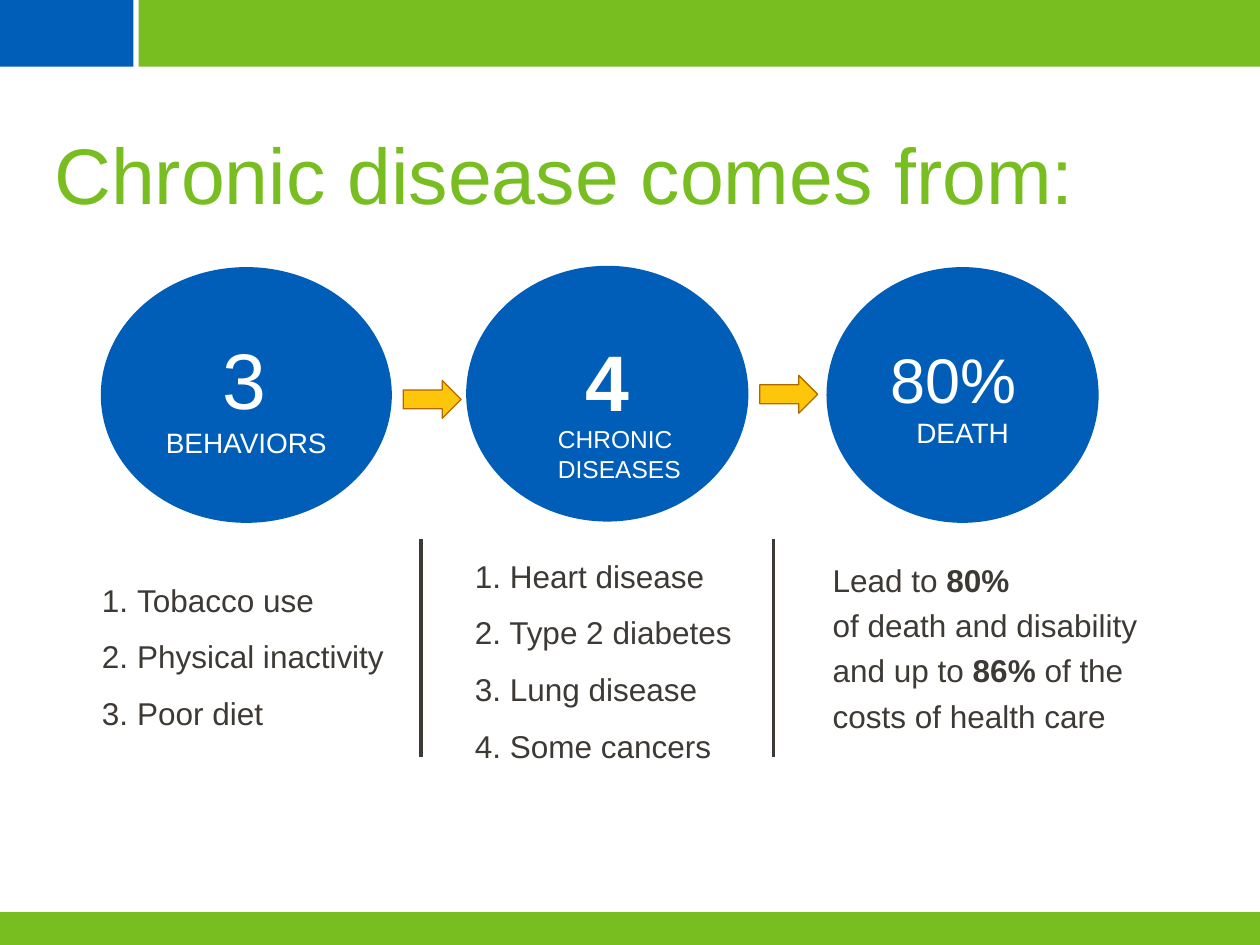
from lxml import etree
from pptx import Presentation
from pptx.dml.color import RGBColor
from pptx.enum.shapes import MSO_CONNECTOR, MSO_SHAPE
from pptx.enum.text import MSO_ANCHOR, PP_ALIGN
from pptx.oxml.ns import qn
from pptx.util import Inches, Pt

RECT, OVAL, ARROW = MSO_SHAPE.RECTANGLE, MSO_SHAPE.OVAL, MSO_SHAPE.RIGHT_ARROW
LINE = MSO_CONNECTOR.STRAIGHT
LEFT, CENTER = PP_ALIGN.LEFT, PP_ALIGN.CENTER
TOP, MIDDLE = MSO_ANCHOR.TOP, MSO_ANCHOR.MIDDLE

HEX = {"green": "78BE20", "blue": "005EB8", "gold": "FEC60B",
       "rust": "B26800", "dark": "3D3935", "white": "FFFFFF"}
RGB = {name: RGBColor.from_string(code) for name, code in HEX.items()}

deck = Presentation()
deck.slide_width, deck.slide_height = Inches(10), Inches(7.5)
slide = deck.slides.add_slide(deck.slide_layouts[5])
shapes = slide.shapes


def grid(*spots):
    """Turn x, y pairs on a grid of 100 columns by 75 rows into lengths."""
    units = (deck.slide_width / 100, deck.slide_height / 75)
    return [round(spot * units[i % 2]) for i, spot in enumerate(spots)]


def write(frame, paras, size=18, color="dark", align=LEFT, anchor=TOP,
          space=1.0, margin=0, indent=0, number=False):
    """Fill a frame; a paragraph is a list of (text, own size, bold) runs."""
    frame.word_wrap = True
    frame.vertical_anchor = anchor
    for i, runs in enumerate(paras):
        para = frame.paragraphs[0] if i == 0 else frame.add_paragraph()
        props = para._p.get_or_add_pPr()
        if margin:
            props.set("marL", str(Inches(margin)))
            props.set("indent", str(Inches(indent)))
        if number:
            etree.SubElement(props, qn("a:buFont"), typeface="+mj-lt")
            etree.SubElement(props, qn("a:buAutoNum"), type="arabicPeriod")
        para.alignment, para.line_spacing = align, space
        for text, own, bold in runs:
            run = para.add_run()
            run.text = text.rstrip("\n")
            run.font.name, run.font.size = "Arial", Pt(own or size)
            run.font.bold, run.font.color.rgb = bold, RGB[color]
            if text.endswith("\n"):
                para.add_line_break()


# Bands, circles and arrows
blocks = [
    (RECT, "green", (11, 0, 89, 5.3), []),
    (RECT, "blue", (0, 0, 10.6, 5.3), []),
    (RECT, "green", (0, 72.4, 100, 2.6), []),
    (OVAL, "blue", (8, 21.2, 23.1, 20.3),
     [("3", 45, False), (" \n", 7.5, False), ("BEHAVIORS", 16, False)]),
    (OVAL, "blue", (37, 21.1, 22.4, 20.3), []),
    (ARROW, "gold", (32, 30.2, 4.6, 3), []),
    (ARROW, "gold", (60.3, 29.8, 4.6, 3), []),
    (OVAL, "blue", (65.6, 21.2, 21.6, 20.3),
     [("80% \n", 36, False), ("DEATH", 16, False)]),
]
for kind, color, spot, runs in blocks:
    block = shapes.add_shape(kind, *grid(*spot))
    block.shadow.inherit = False
    block.fill.solid()
    block.fill.fore_color.rgb = RGB[color]
    if kind == ARROW:
        block.line.color.rgb, block.line.width = RGB["rust"], Pt(0.75)
    else:
        block.line.fill.background()
    if runs:
        write(block.text_frame, [runs], color="white", align=CENTER, anchor=MIDDLE)

# Column dividers
for x in (33.4, 61.4):
    rule = shapes.add_connector(LINE, *grid(x, 42.8, x, 60.1))
    rule.line.color.rgb, rule.line.width = RGB["dark"], Pt(2)
    etree.SubElement(rule._element.spPr, qn("a:effectLst"))

# Title
title = shapes.title
title.left, title.top, title.width, title.height = grid(3.3, 8.6, 90, 10.2)
write(title.text_frame, [[("Chronic disease comes from:", 45, False)]],
      color="green", anchor=MIDDLE)

# Labels of the middle circle and the three columns of text
habits = ["Tobacco use", "Physical inactivity", "Poor diet"]
ills = ["1. Heart disease", "2. Type 2 diabetes", "3. Lung disease", "4. Some cancers"]
toll = [("Lead to ", None, False), ("80% \n", None, True),
        ("of death and disability and up to ", None, False),
        ("86% ", None, True), ("of the costs of health care", None, False)]
notes = [
    ((43.3, 33.2, 13.3, 5.7), [[("CHRONIC DISEASES", 14, False)]],
     {"color": "white"}),
    ((45.5, 25.9, 6.6, 8.6), [[("4", 45, True)]], {"color": "white"}),
    ((3.3, 44.1, 28.4, 14.6), [[(habit, None, False)] for habit in habits],
     {"space": 1.5, "margin": 0.66, "indent": -0.28, "number": True}),
    ((31.7, 42.2, 37.5, 18.6), [[(ill, None, False)] for ill in ills],
     {"space": 1.5, "margin": 0.5}),
    ((65.1, 43.4, 30.6, 15.6), [toll], {"space": 1.2}),
]
for spot, paras, look in notes:
    write(shapes.add_textbox(*grid(*spot)).text_frame, paras, **look)

deck.save("out.pptx")
